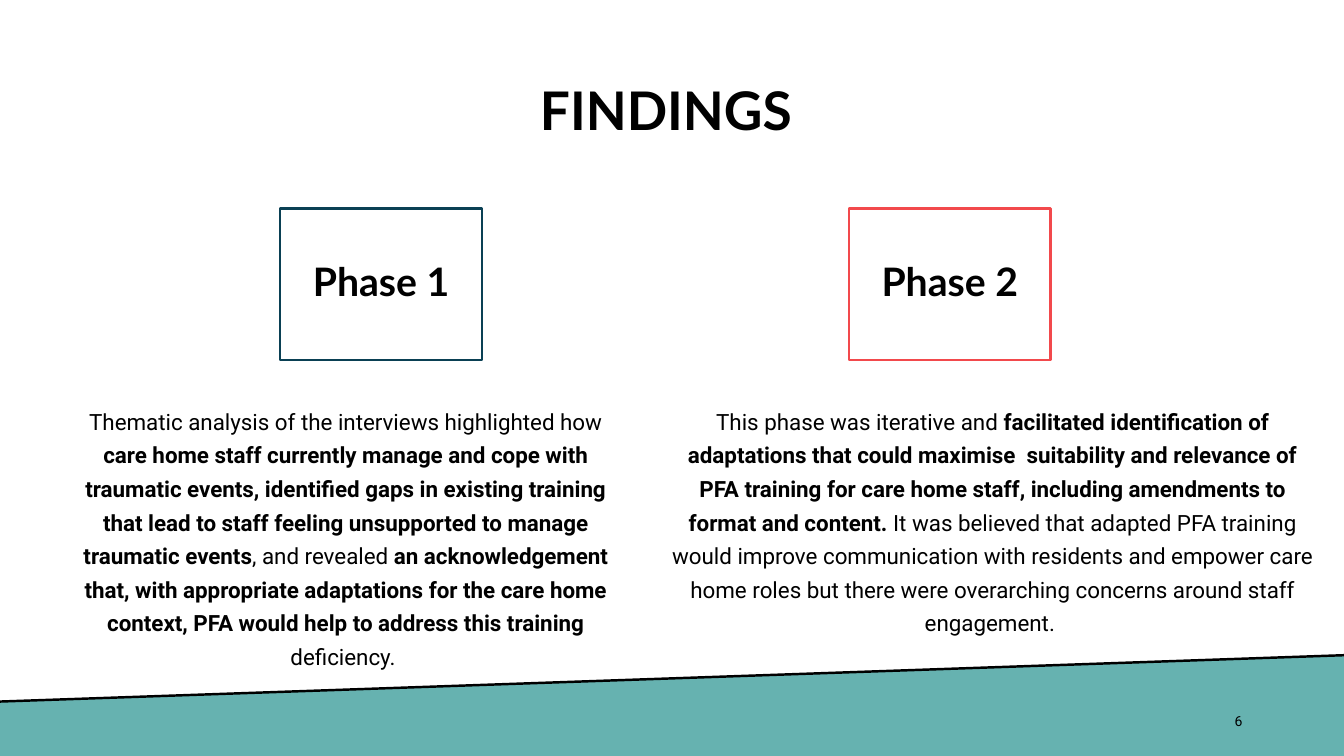
import pptx
import pptx.dml.color
import pptx.enum.shapes
import pptx.enum.text
import pptx.oxml.ns
import pptx.util
from lxml import etree

Inches = pptx.util.Inches
Pt = pptx.util.Pt
RGBColor = pptx.dml.color.RGBColor
ALIGN = pptx.enum.text.PP_ALIGN
ANCHOR = pptx.enum.text.MSO_ANCHOR

BLACK = RGBColor(0x00, 0x00, 0x00)
WHITE = RGBColor(0xFF, 0xFF, 0xFF)
TEAL = RGBColor(0x66, 0xB2, 0xB0)
NAVY = RGBColor(0x0A, 0x40, 0x54)
CORAL = RGBColor(0xF2, 0x49, 0x4C)

WIDTH, HEIGHT = 13.33, 7.5
RULE = Pt(1.75)

PHASE_1_FINDINGS = [
    ("Thematic analysis of the interviews highlighted how ", False),
    ("care home staff currently manage and cope with traumatic events, identified gaps in "
     "existing training that lead to staff feeling unsupported to manage traumatic events", True),
    (", and revealed ", False),
    ("an acknowledgement that, with appropriate adaptations for the care home context, "
     "PFA would help to address this training ", True),
    ("deficiency. ", False),
]
PHASE_2_FINDINGS = [
    ("This phase was iterative and ", False),
    ("facilitated identification of adaptations that could maximise  suitability and relevance "
     "of PFA training for care home staff, including amendments to format and content. ", True),
    ("It was believed that adapted PFA training would improve communication with residents and "
     "empower care home roles but there were overarching concerns around staff engagement. ", False),
]


def write(shape, runs, *, size, font="Roboto", align=ALIGN.CENTER,
          anchor=ANCHOR.MIDDLE, spacing=None, before=0):
    """Fill a shape with one paragraph of (text, bold) runs."""
    frame = shape.text_frame
    frame.word_wrap = True
    frame.vertical_anchor = anchor
    paragraph = frame.paragraphs[0]
    paragraph.alignment = align
    paragraph.line_spacing = spacing
    paragraph.space_before = Pt(before)
    for words, bold in runs:
        run = paragraph.add_run()
        run.text = words
        run.font.name = font
        run.font.size = Pt(size)
        run.font.bold = bold
        run.font.color.rgb = BLACK


def add_text(slide, box, runs, **style):
    """Place a text box at box (left, top, width, height)."""
    write(slide.shapes.add_textbox(*map(Inches, box)), runs, **style)


def add_footer(slide, left, top, width, height, drop):
    """Draw the teal band whose top edge starts drop lower on the left."""
    right, bottom = left + width, top + height
    outline = slide.shapes.build_freeform(Inches(left), Inches(top + drop))
    corners = [(right, top), (right, bottom), (left, bottom)]
    outline.add_line_segments([(Inches(x), Inches(y)) for x, y in corners])
    band = outline.convert_to_shape()
    band.shadow.inherit = False
    band.fill.solid()
    band.fill.fore_color.rgb = TEAL
    band.line.fill.background()

    edge = slide.shapes.add_connector(
        pptx.enum.shapes.MSO_CONNECTOR.STRAIGHT,
        Inches(right), Inches(top), Inches(left), Inches(top + drop))
    edge.line.color.rgb = BLACK
    edge.line.width = RULE
    etree.SubElement(edge._element.spPr, pptx.oxml.ns.qn("a:effectLst"))


def add_phase(slide, left, top, width, height, heading, heading_left, color, findings):
    """Place an outlined phase heading above its findings."""
    card = slide.shapes.add_shape(
        pptx.enum.shapes.MSO_SHAPE.RECTANGLE,
        Inches(heading_left), Inches(top), Inches(2), Inches(1.5))
    card.shadow.inherit = False
    card.fill.background()
    card.line.color.rgb = color
    card.line.width = RULE
    write(card, [(heading, True)], size=28, font="Lato", spacing=0.9)

    findings_top = 1.86
    add_text(slide, (left, top + findings_top, width, height - findings_top), findings,
             size=16, anchor=ANCHOR.TOP, spacing=Pt(24), before=10)


def main():
    """Build and save the findings slide."""
    deck = pptx.Presentation()
    deck.slide_width, deck.slide_height = Inches(WIDTH), Inches(HEIGHT)
    slide = deck.slides.add_slide(deck.slide_layouts[6])
    slide.background.fill.solid()
    slide.background.fill.fore_color.rgb = WHITE

    add_footer(slide, 0, 6.5, WIDTH, HEIGHT - 6.5, 0.46)
    add_text(slide, (0.92, 0.4, 11.5, 1.45), [("FINDINGS ", True)],
             size=38, font="Lato", spacing=0.9)
    add_phase(slide, 0.63, 2.07, 5.6, 4.28, "Phase 1", 2.78, NAVY, PHASE_1_FINDINGS)
    add_phase(slide, 6.55, 2.07, 6.59, 4.02, "Phase 2", 8.42, CORAL, PHASE_2_FINDINGS)
    add_text(slide, (9.42, 6.95, 3, 0.4), [("6", False)], size=10, align=ALIGN.RIGHT)

    deck.save("out.pptx")


if __name__ == "__main__":
    main()
